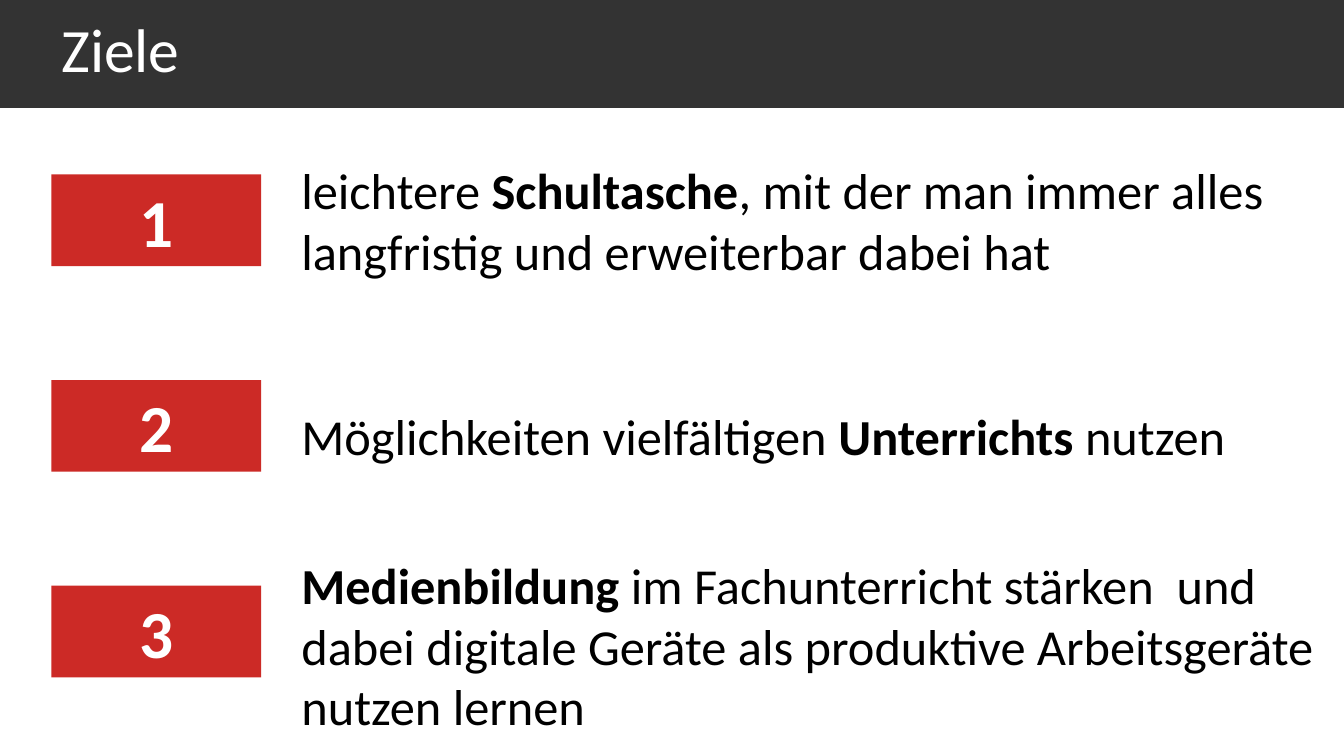
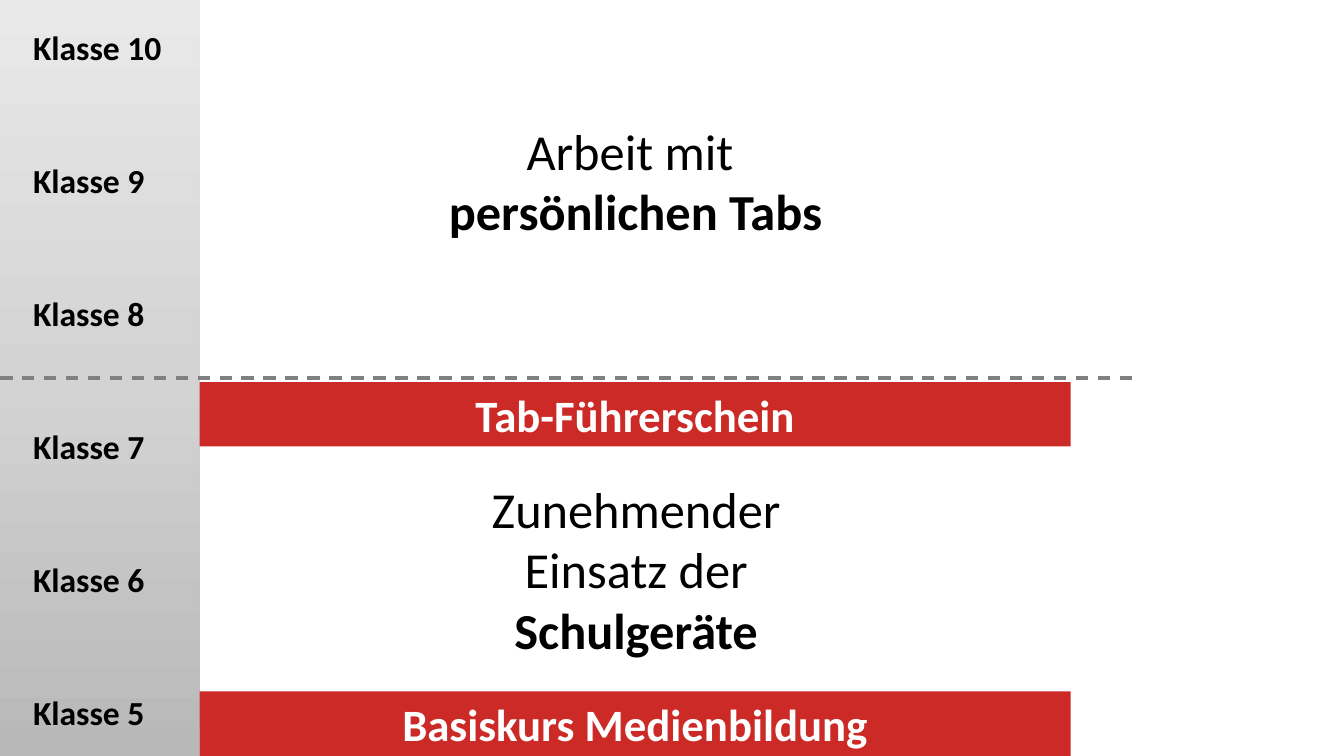
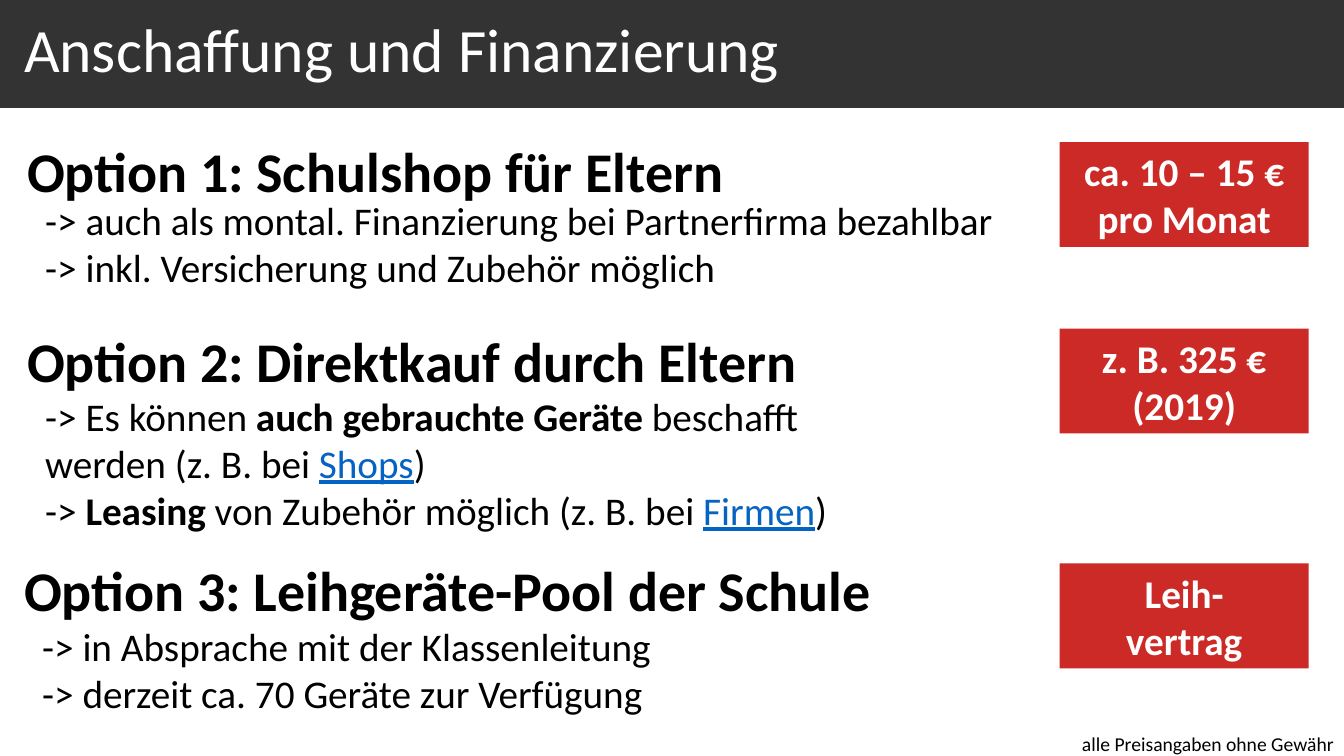
import copy
from dataclasses import dataclass

import pptx
import pptx.dml.color
import pptx.enum.dml
import pptx.enum.shapes
import pptx.enum.text
import pptx.oxml.ns
import pptx.util
from lxml import etree

Inches = pptx.util.Inches
ALIGN = pptx.enum.text.PP_ALIGN
ANCHOR = pptx.enum.text.MSO_ANCHOR
qn = pptx.oxml.ns.qn


@dataclass(frozen=True)
class Theme:
    font: str = "Calibri"
    band: str = "333333"
    red: str = "CC2A26"
    white: str = "FFFFFF"
    black: str = "000000"
    link: str = "0563C1"
    dash: str = "808080"
    gradient: tuple = ((0, "B8B8B8"), (0.5, "D3D3D3"), (1, "E9E9E9"))
    number: int = 48
    title: int = 44
    heading: int = 40
    body: int = 36
    bar: int = 32
    detail: int = 28
    label: int = 24
    note: int = 14


T = Theme()
WIDTH, HEIGHT = 13.33, 7.5

# A paragraph is a list of runs: plain text, or (text, "bold" | "link").
# Goals: top, width, height, line spacing, runs
GOALS = [
    (1.53, 10.06, 1.31, 1, ["leichtere ", ("Schultasche", "bold"),
     ", mit der man immer alles langfristig und erweiterbar dabei hat"]),
    (3.67, 9.72, 0.92, 1.5, ["Möglichkeiten vielfältigen ",
                             ("Unterrichts ", "bold"), "nutzen"]),
    (5.45, 10.28, 1.92, 1, [("Medienbildung ", "bold"),
     "im Fachunterricht stärken  und dabei digitale Geräte als "
     "produktive Arbeitsgeräte nutzen lernen"]),
]

GRADES = range(10, 4, -1)
PHASES = [
    ((4.22, 1.14, 4.17, 1.31),
     ["Arbeit mit \n", ("persönlichen Tabs", "bold")]),
    ((4.45, 4.69, 3.72, 1.92),
     ["Zunehmender Einsatz der ", ("Schulgeräte", "bold")]),
]
COURSES = [(3.79, "Tab-Führerschein"), (6.86, "Basiskurs Medienbildung")]

# Options: heading, heading place, details, details place, price, price top
OPTIONS = [
    ("Option 1: Schulshop für Eltern", (0.17, 1.31),
     [["-> auch als montal. Finanzierung bei Partnerfirma bezahlbar"],
      ["-> inkl. Versicherung und Zubehör möglich"]],
     (0.35, 1.9, 9.67, 1.04), "ca. 10 – 15 € pro Monat", 1.41),
    ("Option 2: Direktkauf durch Eltern", (0.17, 3.19),
     [["-> Es können ", ("auch gebrauchte Geräte ", "bold"),
       "beschafft werden (z. B. bei ", ("Shops", "link"), ")"],
      ["-> ", ("Leasing", "bold"), " von Zubehör möglich (z. B. bei ",
       ("Firmen", "link"), ")"]],
     (0.35, 3.84, 8.86, 1.51), "z. B. 325 €\n(2019)", 3.26),
    ("Option 3: Leihgeräte-Pool der Schule", (0.14, 5.46),
     [["-> in Absprache mit der Klassenleitung"],
      ["-> derzeit ca. 70 Geräte zur Verfügung"]],
     (0.32, 6.12, 12.66, 1.04), "Leih-\nvertrag", 5.59),
]


def rgb(color):
    return pptx.dml.color.RGBColor.from_string(color)


def write(tf, paragraphs, size, color=T.black, bold=False,
          align=ALIGN.LEFT, spacing=1):
    tf.word_wrap = True
    for i, runs in enumerate(paragraphs):
        p = tf.add_paragraph() if i else tf.paragraphs[0]
        p.alignment, p.line_spacing = align, spacing
        p.font.name, p.font.size = T.font, pptx.util.Pt(size)
        p.font.bold, p.font.color.rgb = bold, rgb(color)
        for run in runs:
            text, style = (run, None) if isinstance(run, str) else run
            for j, line in enumerate(text.split("\n")):
                if j:
                    p.add_line_break()
                if not line:
                    continue
                r = p.add_run()
                r.text = line
                if style == "bold":
                    r.font.bold = True
                elif style == "link":
                    r.font.underline = True
                    r.font.color.rgb = rgb(T.link)


def text_box(s, at, paragraphs, size, **style):
    tf = s.shapes.add_textbox(*map(Inches, at)).text_frame
    write(tf, paragraphs, size, **style)
    return tf


def rectangle(s, at, color):
    sp = s.shapes.add_shape(pptx.enum.shapes.MSO_SHAPE.RECTANGLE,
                            *map(Inches, at))
    sp.shadow.inherit = False
    sp.fill.solid()
    sp.fill.fore_color.rgb = rgb(color)
    sp.line.fill.background()
    return sp


def red_box(s, at, text, size):
    write(rectangle(s, at, T.red).text_frame, [[text]], size,
          color=T.white, bold=True, align=ALIGN.CENTER)


def title_band(s, title, left):
    rectangle(s, (0, 0, WIDTH, 1.07), T.band)
    tf = text_box(s, (left, 0, 11.5, 1.04), [[title]], T.title,
                  color=T.white, spacing=0.9)
    tf.vertical_anchor = ANCHOR.MIDDLE


def fill_gradient(sp):
    """Shade the shape from bottom to top with the theme's stops."""
    sp.fill.gradient()
    sp.fill.gradient_angle = 90
    stops = sp._element.spPr.find(qn("a:gradFill")).find(qn("a:gsLst"))
    stops.append(copy.deepcopy(stops[-1]))
    for stop, (position, color) in zip(sp.fill.gradient_stops, T.gradient):
        stop.position, stop.color.rgb = position, rgb(color)


def dashed_line(s, y, right):
    line = s.shapes.add_connector(
        pptx.enum.shapes.MSO_CONNECTOR.STRAIGHT,
        0, Inches(y), Inches(right), Inches(y))
    line.line.color.rgb = rgb(T.dash)
    line.line.width = pptx.util.Pt(2.25)
    line.line.dash_style = pptx.enum.dml.MSO_LINE.DASH
    etree.SubElement(line._element.spPr, qn("a:effectLst"))


def goals_slide(s):
    title_band(s, "Ziele", 0.51)
    for i, (top, width, height, spacing, runs) in enumerate(GOALS):
        red_box(s, (0.51, 1.73 + 2.04 * i, 2.08, 0.91), str(i + 1), T.number)
        text_box(s, (2.89, top, width, height), [runs], T.body,
                 spacing=spacing)


def grades_slide(s):
    column = 1.98
    fill_gradient(rectangle(s, (0, 0, column, HEIGHT), T.white))
    for i, grade in enumerate(GRADES):
        text_box(s, (0.23, 0.22 + 1.32 * i, 1.7, 0.5),
                 [[f"Klasse {grade}"]], T.label, bold=True)
    dashed_line(s, HEIGHT / 2, 11.3)
    for at, runs in PHASES:
        text_box(s, at, [runs], T.body, align=ALIGN.CENTER)
    for top, course in COURSES:
        red_box(s, (column, top, 8.64, 0.64), course, T.bar)


def options_slide(s):
    title_band(s, "Anschaffung und Finanzierung", 0.14)
    for heading, place, details, details_at, price, price_top in OPTIONS:
        text_box(s, (*place, 10.2, 0.77), [[heading]], T.heading, bold=True)
        text_box(s, details_at, details, T.detail)
        red_box(s, (10.51, price_top, 2.47, 1.04), price, T.detail)
    text_box(s, (10.41, 7.21, 2.92, 0.29),
             [["alle Preisangaben ohne Gewähr"]], T.note, align=ALIGN.RIGHT)


def main():
    prs = pptx.Presentation()
    prs.slide_width, prs.slide_height = Inches(WIDTH), Inches(HEIGHT)
    for build in (goals_slide, grades_slide, options_slide):
        build(prs.slides.add_slide(prs.slide_layouts[6]))
    prs.save("out.pptx")


if __name__ == "__main__":
    main()
